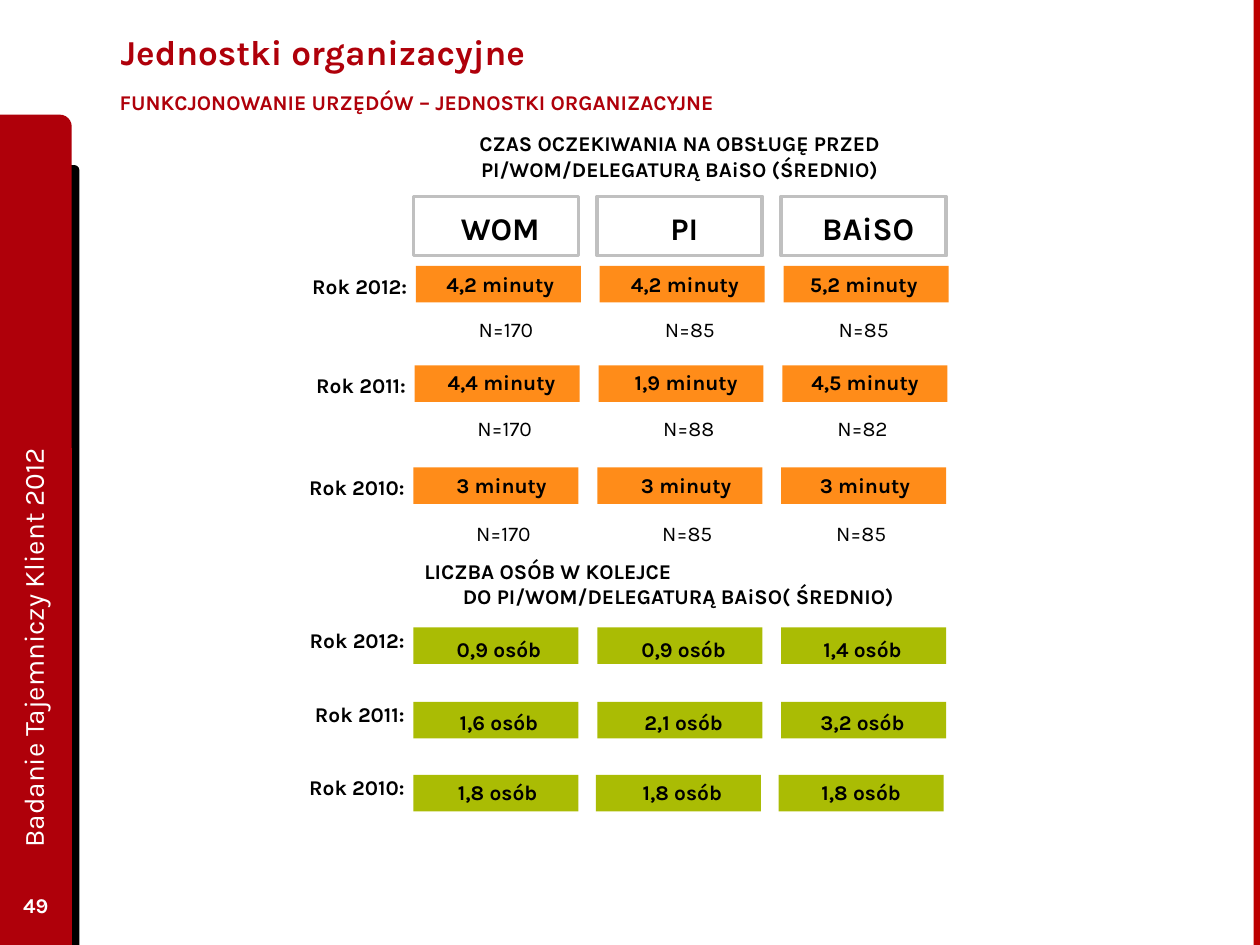
from dataclasses import dataclass
from typing import Optional

from pptx import Presentation
from pptx.dml.color import RGBColor
from pptx.enum.shapes import MSO_SHAPE as Preset
from pptx.enum.text import MSO_ANCHOR as Anchor, PP_ALIGN as Align
from pptx.util import Inches, Pt

WIDTH, HEIGHT = 10, 7.5
RED, BLACK, WHITE = "AF000A", "000000", "FFFFFF"
ORANGE, GREEN, GRAY = "FF8C19", "AABC04", "C0C0C0"
PITCH = 1.46
BAR_WIDTH, BAR_HEIGHT = 1.31, 0.29
LINE_HEIGHT = 0.3
VALUE_COLUMNS = ((0, 1.38), (PITCH, 1.39), (2.77, 1.61))
SAMPLE_COLUMNS = ((0, 0.81), (1.54, 0.65), (2 * PITCH, 0.65))


@dataclass
class Box:
    left: float
    top: float
    width: float
    height: float

    def lengths(self) -> tuple:
        return tuple(Inches(n) for n in (self.left, self.top, self.width, self.height))


@dataclass
class Style:
    size: float = 12
    color: str = BLACK
    bold: bool = True
    align: Align = Align.CENTER
    anchor: Anchor = Anchor.TOP
    side_inset: float = 0.1
    wrap: bool = True


@dataclass
class YearRow:
    year: str
    left: float
    top: float
    values: tuple
    value_left: float
    value_top: float
    samples: tuple = ()
    sample_drop: float = 0.35
    pitch: float = PITCH


@dataclass
class Measure:
    color: str
    year_shift: float
    rows: tuple


def rgb(value: str) -> RGBColor:
    return RGBColor.from_string(value)


def add_block(slide, box: Box, fill: str, preset=Preset.RECTANGLE,
              border: Optional[str] = None) -> None:
    block = slide.shapes.add_shape(preset, *box.lengths())
    block.shadow.inherit = False
    block.fill.solid()
    block.fill.fore_color.rgb = rgb(fill)
    if border:
        block.line.color.rgb = rgb(border)
        block.line.width = Pt(2)
    else:
        block.line.fill.background()


def add_text(slide, box: Box, lines: tuple, style: Style, rotation: float = 0) -> None:
    label = slide.shapes.add_textbox(*box.lengths())
    label.rotation = rotation
    frame = label.text_frame
    frame.word_wrap = style.wrap
    frame.vertical_anchor = style.anchor
    frame.margin_left = frame.margin_right = Inches(style.side_inset)
    for index, (wording, align) in enumerate(lines):
        paragraph = frame.paragraphs[0] if index == 0 else frame.add_paragraph()
        paragraph.alignment = align or style.align
        run = paragraph.add_run()
        run.text = wording
        run.font.name = "Karla"
        run.font.size = Pt(style.size)
        run.font.bold = style.bold
        run.font.color.rgb = rgb(style.color)


def add_line(slide, box: Box, wording: str, style: Style, rotation: float = 0) -> None:
    add_text(slide, box, ((wording, None),), style, rotation)


def add_year_row(slide, row: YearRow, measure: Measure) -> None:
    for column, value in enumerate(row.values):
        add_block(slide, Box(row.left + column * row.pitch, row.top,
                             BAR_WIDTH, BAR_HEIGHT), measure.color)
        offset, width = VALUE_COLUMNS[column]
        add_line(slide, Box(row.value_left + offset, row.value_top, width, LINE_HEIGHT),
                 value, Style())
    for (offset, width), sample in zip(SAMPLE_COLUMNS, row.samples):
        add_line(slide, Box(row.left + 0.31 + offset, row.top + row.sample_drop,
                            width, LINE_HEIGHT),
                 f"N={sample}", Style(bold=False, anchor=Anchor.MIDDLE))
    add_line(slide, Box(row.left - 1.62, row.top + measure.year_shift, 1.65, LINE_HEIGHT),
             f"Rok {row.year}:", Style(align=Align.RIGHT, anchor=Anchor.MIDDLE))


def add_frame(slide) -> None:
    corner = Preset.ROUND_1_RECTANGLE
    add_block(slide, Box(0.39, 1.31, 0.24, HEIGHT - 1.31), BLACK, corner)
    add_block(slide, Box(0, 0.91, 0.57, HEIGHT - 0.91), RED, corner)
    add_block(slide, Box(WIDTH - 0.05, 0, 0.05, HEIGHT), "BD0000")
    add_line(slide, Box(-2.62, 3.69, 5.76, 0.51), "Badanie Tajemniczy Klient 2012",
             Style(16, WHITE, False, Align.LEFT, Anchor.MIDDLE), 270)
    add_line(slide, Box(0, 6.98, 0.57, 0.4), "49",
             Style(color=WHITE, anchor=Anchor.MIDDLE))


def add_headings(slide) -> None:
    add_line(slide, Box(0.86, 0.05, 7.77, 0.72), "Jednostki organizacyjne",
             Style(20, RED, align=Align.LEFT, anchor=Anchor.MIDDLE))
    add_line(slide, Box(0.75, 0.66, 5.54, 0.33),
             "FUNKCJONOWANIE URZĘDÓW – JEDNOSTKI ORGANIZACYJNE",
             Style(color=RED, align=Align.LEFT, side_inset=0.2, wrap=False))
    add_line(slide, Box(3.28, 0.99, 4.23, 0.5),
             "CZAS OCZEKIWANIA NA OBSŁUGĘ PRZED PI/WOM/DELEGATURĄ BAiSO (ŚREDNIO)",
             Style())
    add_text(slide, Box(3.27, 4.38, 4.23, 0.5),
             (("LICZBA OSÓB W KOLEJCE", Align.LEFT),
              ("DO PI/WOM/DELEGATURĄ BAiSO( ŚREDNIO)", Align.CENTER)), Style())
    for column, unit in enumerate(("WOM", "PI", "BAiSO")):
        left = 3.28 + column * PITCH
        add_block(slide, Box(left, 1.56, BAR_WIDTH, 0.47), WHITE, border=GRAY)
        add_line(slide, Box(left + 0.08, 1.6, 1.22, 0.41), unit,
                 Style(18, anchor=Anchor.MIDDLE, side_inset=0.06))


WAITING_TIME = Measure(ORANGE, 0.01, (
    YearRow("2012", 3.3, 2.11, ("4,2 minuty", "4,2 minuty", "5,2 minuty"),
            3.28, 2.11, (170, 85, 85)),
    YearRow("2011", 3.29, 2.9, ("4,4 minuty", "1,9 minuty", "4,5 minuty"),
            3.29, 2.88, (170, 88, 82)),
    YearRow("2010", 3.28, 3.71, ("3 minuty",) * 3,
            3.29, 3.7, (170, 85, 85), 0.37),
))
QUEUE_LENGTH = Measure(GREEN, -0.05, (
    YearRow("2012", 3.28, 4.98, ("0,9 osób", "0,9 osób", "1,4 osób"), 3.27, 5),
    YearRow("2011", 3.28, 5.57, ("1,6 osób", "2,1 osób", "3,2 osób"), 3.27, 5.58),
    YearRow("2010", 3.28, 6.15, ("1,8 osób",) * 3, 3.26, 6.14, pitch=1.45),
))


def main() -> None:
    deck = Presentation()
    deck.slide_width, deck.slide_height = Inches(WIDTH), Inches(HEIGHT)
    slide = deck.slides.add_slide(deck.slide_layouts[6])
    add_frame(slide)
    add_headings(slide)
    for measure in (WAITING_TIME, QUEUE_LENGTH):
        for row in measure.rows:
            add_year_row(slide, row, measure)
    deck.save("out.pptx")


if __name__ == "__main__":
    main()
